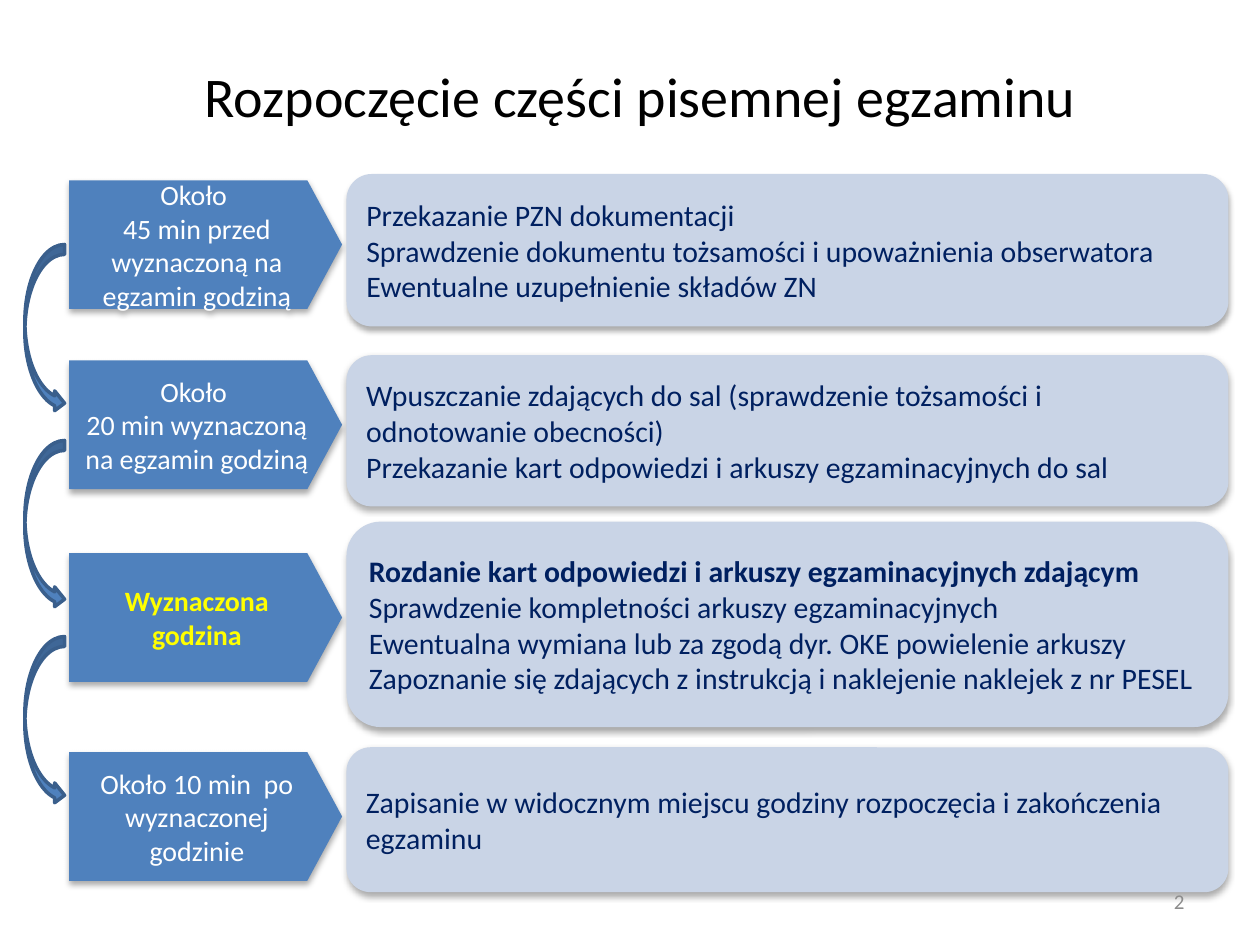
from lxml.etree import SubElement
from pptx import Presentation
from pptx.dml.color import RGBColor
from pptx.enum.shapes import MSO_SHAPE
from pptx.enum.text import MSO_ANCHOR, PP_ALIGN
from pptx.oxml.ns import qn
from pptx.util import Pt

BLACK = RGBColor(0x00, 0x00, 0x00)
WHITE = RGBColor(0xFF, 0xFF, 0xFF)
YELLOW = RGBColor(0xFF, 0xFF, 0x00)
NAVY = RGBColor(0x00, 0x20, 0x60)
BLUE = RGBColor(0x4F, 0x81, 0xBD)
EDGE = RGBColor(0x3A, 0x5F, 0x8C)
PALE = RGBColor(0xC9, 0xD4, 0xE6)
GREY = RGBColor(0x8C, 0x8C, 0x8C)

STEPS = [
    (103, "Około \n45 min przed wyznaczoną na egzamin godziną", 99.4, 87.1,
     "Przekazanie PZN dokumentacji\n"
     "Sprawdzenie dokumentu tożsamości i upoważnienia obserwatora\n"
     "Ewentualne uzupełnienie składów ZN"),
    (206, "Około \n20 min wyznaczoną na egzamin godziną", 203, 86.4,
     "Wpuszczanie zdających do sal (sprawdzenie tożsamości i odnotowanie obecności)\n"
     "Przekazanie kart odpowiedzi i arkuszy egzaminacyjnych do sal"),
    (316.1, "Wyznaczona\ngodzina", 298.1, 117.4,
     "Rozdanie kart odpowiedzi i arkuszy egzaminacyjnych zdającym\n"
     "Sprawdzenie kompletności arkuszy egzaminacyjnych\n"
     "Ewentualna wymiana lub za zgodą dyr. OKE powielenie arkuszy\n"
     "Zapoznanie się zdających z instrukcją i naklejenie naklejek z nr PESEL"),
    (429.8, "Około 10 min  po wyznaczonej godzinie", 427, 82.8,
     "Zapisanie w widocznym miejscu godziny rozpoczęcia i zakończenia egzaminu"),
]
KEY = 2


def write(frame, text, size, color, align, bold=0):
    frame.text = text
    frame.word_wrap = True
    frame.vertical_anchor = MSO_ANCHOR.MIDDLE
    for i, para in enumerate(frame.paragraphs):
        para.alignment = align
        for run in para.runs:
            run.font.name = "Calibri"
            run.font.size = Pt(size)
            run.font.color.rgb = color
            run.font.bold = i < bold


def add_shape(slide, kind, box, fill):
    shape = slide.shapes.add_shape(kind, *map(Pt, box))
    shape.shadow.inherit = False
    shape.fill.solid()
    shape.fill.fore_color.rgb = fill
    shape.line.fill.background()
    return shape


def add_shade(shape):
    effects = shape.element.spPr.find(qn("a:effectLst"))
    shade = SubElement(effects, qn("a:outerShdw"), blurRad=str(Pt(3.5)),
                       dist=str(Pt(2.2)), dir="5400000", rotWithShape="0")
    color = SubElement(shade, qn("a:srgbClr"), val="000000")
    SubElement(color, qn("a:alpha"), val="32000")


def add_plate(slide, top, text, key):
    plate = add_shape(slide, MSO_SHAPE.PENTAGON, (39.5, top, 156, 73.5), BLUE)
    plate.adjustments[0] = 0.27
    add_shade(plate)
    write(plate.text_frame, text, 16, YELLOW if key else WHITE,
          PP_ALIGN.CENTER, 2 if key else 0)


def add_card(slide, top, height, text, key):
    card = add_shape(slide, MSO_SHAPE.ROUNDED_RECTANGLE, (198, top, 504, height), PALE)
    add_shade(card)
    write(card.text_frame, text, 17, NAVY, PP_ALIGN.LEFT, 1 if key else 0)


def add_arrow(slide, top):
    arrow = add_shape(slide, MSO_SHAPE.CURVED_RIGHT_ARROW, (14.2, top, 22.7, 96.4), BLUE)
    arrow.line.color.rgb = EDGE
    arrow.line.width = Pt(2)


def add_title(slide, text):
    title = slide.shapes.title
    title.left, title.top, title.width, title.height = map(Pt, (48.2, 9.4, 635.8, 90))
    write(title.text_frame, text, 32, BLACK, PP_ALIGN.CENTER)


def add_number(slide, text):
    box = slide.shapes.add_textbox(*map(Pt, (516, 500.5, 168, 28.8)))
    write(box.text_frame, text, 12, GREY, PP_ALIGN.RIGHT)


def main():
    deck = Presentation()
    deck.slide_width, deck.slide_height = Pt(720), Pt(540)
    slide = deck.slides.add_slide(deck.slide_layouts[5])
    add_title(slide, "Rozpoczęcie części pisemnej egzaminu")
    for i, (top, when, y, height, tasks) in enumerate(STEPS):
        add_plate(slide, top, when, i == KEY)
        add_card(slide, y, height, tasks, i == KEY)
    for i in range(len(STEPS) - 1):
        add_arrow(slide, 139.7 + 112 * i)
    add_number(slide, "2")
    deck.save("out.pptx")


if __name__ == "__main__":
    main()
